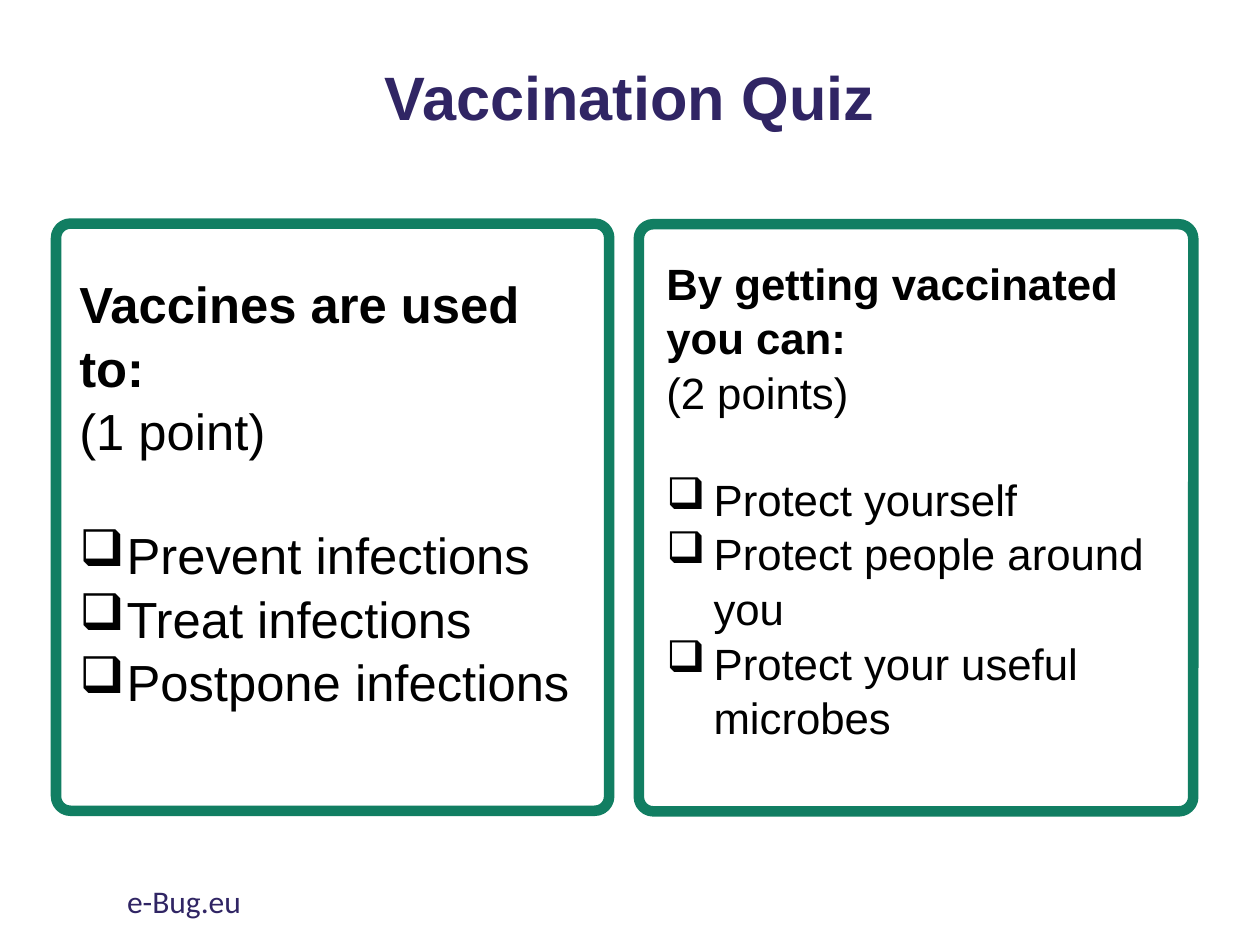
import pptx
import pptx.dml.color
import pptx.enum.shapes
import pptx.enum.text
import pptx.oxml
import pptx.oxml.ns
import pptx.util

Pt = pptx.util.Pt
RGB = pptx.dml.color.RGBColor.from_string
ALIGN = pptx.enum.text.PP_ALIGN
ANCHOR = pptx.enum.text.MSO_ANCHOR

THEME = {
    "navy": RGB("302564"),
    "green": RGB("117E62"),
    "black": RGB("000000"),
    "heading": {"name": "Arial", "size": Pt(35), "bold": True},
    "body": {"name": "Arial"},
    "footer": {"name": "Calibri", "size": Pt(18)},
}

QUESTIONS = [
    {"card": (22.3, 137.5, 335.5, 316.1), "box": (38.2, 151.2, 301.7, 253.4),
     "size": 29, "ask": "Vaccines are used to:", "points": "(1 point)",
     "answers": ["Prevent infections", "Treat infections", "Postpone infections"]},
    {"card": (355.7, 137.5, 335.5, 316.8), "box": (373.7, 141.8, 296.6, 280.1),
     "size": 25, "ask": "By getting vaccinated you can:", "points": "(2 points)",
     "answers": ["Protect yourself", "Protect people around you",
                 "Protect your useful microbes"]},
]


def add_box(s, box, anchor=ANCHOR.TOP):
    tf = s.shapes.add_textbox(*map(Pt, box)).text_frame
    tf.word_wrap = True
    tf.vertical_anchor = anchor
    return tf


def add_text(p, text, color, font, **layout):
    r = p.add_run()
    r.text = text
    r.font.color.rgb = color
    for target, values in ((r.font, font), (p, layout)):
        for key, value in values.items():
            setattr(target, key, value)


prs = pptx.Presentation()
prs.slide_width, prs.slide_height = Pt(720), Pt(540)
s = prs.slides.add_slide(prs.slide_layouts[6])

tf = add_box(s, (49.7, 20.2, 620.6, 74.2), ANCHOR.MIDDLE)
add_text(tf.paragraphs[0], "Vaccination Quiz", THEME["navy"], THEME["heading"],
         alignment=ALIGN.CENTER, line_spacing=0.9)

for q in QUESTIONS:
    sp = s.shapes.add_shape(pptx.enum.shapes.MSO_SHAPE.ROUNDED_RECTANGLE,
                            *map(Pt, q["card"]))
    sp.rotation = 90
    sp.adjustments[0] = 0.026
    sp.shadow.inherit = False
    sp.fill.background()
    sp.line.color.rgb = THEME["green"]
    sp.line.width = Pt(6)

for q in QUESTIONS:
    tf = add_box(s, q["box"])
    font = THEME["body"] | {"size": Pt(q["size"])}
    add_text(tf.paragraphs[0], q["ask"], THEME["black"], font | {"bold": True},
             line_spacing=1.04)
    add_text(tf.add_paragraph(), q["points"], THEME["black"], font, line_spacing=1.04)
    for i, answer in enumerate(q["answers"]):
        p = tf.add_paragraph()
        pPr = p._p.get_or_add_pPr()
        pPr.set("marL", str(Pt(27)))
        pPr.set("indent", str(Pt(-27)))
        ns = pptx.oxml.ns.nsdecls("a")
        for xml in (f'<a:buChar {ns} char="❑"/>',
                    f'<a:tabLst {ns}><a:tab pos="{Pt(36)}" algn="l"/></a:tabLst>'):
            pPr.append(pptx.oxml.parse_xml(xml))
        gap = Pt(q["size"] * 1.2) if i == 0 else Pt(0)
        add_text(p, answer, THEME["black"], font, line_spacing=1.04, space_before=gap)

tf = add_box(s, (65.5, 500.4, 243.4, 28.8))
add_text(tf.paragraphs[0], "e-Bug.eu", THEME["navy"], THEME["footer"])

prs.save("out.pptx")
